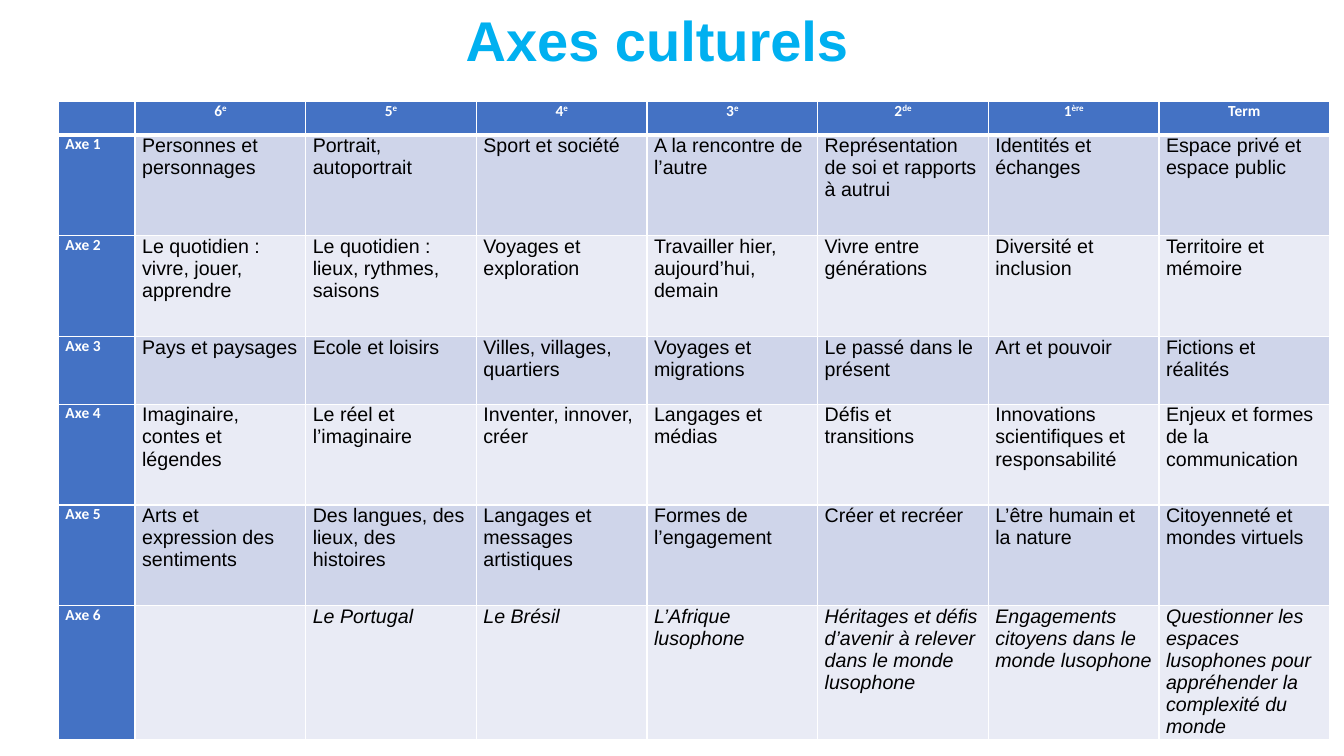
from lxml.etree import SubElement
from pptx import Presentation
from pptx.dml.color import RGBColor
from pptx.enum.text import MSO_ANCHOR, PP_ALIGN
from pptx.oxml import parse_xml
from pptx.oxml.ns import nsdecls
from pptx.util import Inches, Pt

WHITE = RGBColor(0xFF, 0xFF, 0xFF)
BLACK = RGBColor(0x00, 0x00, 0x00)
SKY = RGBColor(0x00, 0xB0, 0xF0)
BLUE = RGBColor(0x44, 0x72, 0xC4)
BAND_DARK = RGBColor(0xCF, 0xD5, 0xEA)
BAND_LIGHT = RGBColor(0xE9, 0xEB, 0xF5)

# Class level and its superscript ending
LEVELS = [("", ""), ("6", "e"), ("5", "e"), ("4", "e"), ("3", "e"),
          ("2", "de"), ("1", "ère"), ("Term", "")]
AXES = [
    ["Personnes et personnages", "Portrait, autoportrait", "Sport et société",
     "A la rencontre de l’autre", "Représentation de soi et rapports à autrui",
     "Identités et échanges", "Espace privé et espace public"],
    ["Le quotidien : vivre, jouer, apprendre", "Le quotidien : lieux, rythmes, saisons",
     "Voyages et exploration", "Travailler hier, aujourd’hui, demain",
     "Vivre entre générations", "Diversité et inclusion", "Territoire et mémoire"],
    ["Pays et paysages", "Ecole et loisirs", "Villes, villages, quartiers",
     "Voyages et migrations", "Le passé dans le présent", "Art et pouvoir",
     "Fictions et réalités"],
    ["Imaginaire, contes et légendes", "Le réel et l’imaginaire",
     "Inventer, innover, créer", "Langages et médias", "Défis et transitions",
     "Innovations scientifiques et responsabilité",
     "Enjeux et formes de la communication"],
    ["Arts et expression des sentiments", "Des langues, des lieux, des histoires",
     "Langages et messages artistiques", "Formes de l’engagement", "Créer et recréer",
     "L’être humain et la nature", "Citoyenneté et mondes virtuels"],
    ["", "Le Portugal", "Le Brésil", "L’Afrique lusophone",
     "Héritages et défis d’avenir à relever dans le monde lusophone",
     "Engagements citoyens dans le monde lusophone",
     "Questionner les espaces lusophones pour appréhender la complexité du monde"],
]
ROW_HEIGHTS = [0.33, 1, 1, 0.67, 1, 1, 1.33]
AXIS_WIDTH = 0.76


def set_font(paragraph, name, size, color, bold=False, italic=False):
    font = paragraph.font
    font.name, font.size, font.bold, font.italic = name, Pt(size), bold, italic
    font.color.rgb = color


def set_borders(cell, top, bottom):
    """Draw white borders; top and bottom are widths in points."""
    properties = cell._tc.get_or_add_tcPr()
    sides = {"lnL": 1, "lnR": 1, "lnT": top, "lnB": bottom}
    for position, (side, width) in enumerate(sides.items()):
        line = parse_xml(f'<a:{side} {nsdecls("a")} w="{Pt(width)}"><a:solidFill>'
                         f'<a:srgbClr val="{WHITE}"/></a:solidFill></a:{side}>')
        properties.insert(position, line)


def format_cell(cell, row, fill):
    cell.margin_left = cell.margin_right = Inches(0.07)
    cell.margin_top = cell.margin_bottom = 0
    cell.fill.solid()
    cell.fill.fore_color.rgb = fill
    set_borders(cell, top=3 if row == 1 else 1, bottom=3 if row == 0 else 1)


def fill_header(table):
    for column, (level, ending) in enumerate(LEVELS):
        cell = table.cell(0, column)
        format_cell(cell, 0, BLUE)
        paragraph = cell.text_frame.paragraphs[0]
        paragraph.alignment = PP_ALIGN.CENTER
        set_font(paragraph, "Calibri", 11, WHITE, bold=True)
        if level:
            paragraph.add_run().text = level
        if ending:
            run = paragraph.add_run()
            run.text = ending
            run._r.get_or_add_rPr().set("baseline", "30000")


def fill_axis(table, row, themes):
    band = BAND_DARK if row % 2 else BAND_LIGHT
    for column, text in enumerate([f"Axe {row}", *themes]):
        cell = table.cell(row, column)
        format_cell(cell, row, band if column else BLUE)
        cell.text = text
        paragraph = cell.text_frame.paragraphs[0]
        if column:
            set_font(paragraph, "Arial", 14, BLACK, italic=row == len(AXES))
        else:
            set_font(paragraph, "Calibri", 11, WHITE, bold=True)


def add_axes_table(slide, left, top, width):
    frame = slide.shapes.add_table(len(ROW_HEIGHTS), len(LEVELS), Inches(left), Inches(top),
                                   Inches(width), Inches(sum(ROW_HEIGHTS)))
    table = frame.table
    table.first_col = True
    level_width = (width - AXIS_WIDTH) / (len(LEVELS) - 1)
    for index, column in enumerate(table.columns):
        column.width = Inches(level_width if index else AXIS_WIDTH)
    for row, height in zip(table.rows, ROW_HEIGHTS):
        row.height = Inches(height)
    fill_header(table)
    for row, themes in enumerate(AXES, start=1):
        fill_axis(table, row, themes)


def add_title(slide, left, top, width, height):
    title = slide.shapes.title
    title.left, title.top = Inches(left), Inches(top)
    title.width, title.height = Inches(width), Inches(height)
    title.text_frame.text = "Axes culturels"
    title.text_frame.vertical_anchor = MSO_ANCHOR.TOP
    paragraph = title.text_frame.paragraphs[0]
    paragraph.alignment = PP_ALIGN.CENTER
    set_font(paragraph, "Arial", 40, SKY, bold=True)


def main():
    presentation = Presentation()
    presentation.slide_width, presentation.slide_height = Inches(13.33), Inches(7.5)
    slide = presentation.slides.add_slide(presentation.slide_layouts[5])
    add_title(slide, 1.82, 0, 9.39, 0.77)
    add_axes_table(slide, 0.58, 1.01, 12.61)
    presentation.save("out.pptx")


if __name__ == "__main__":
    main()
